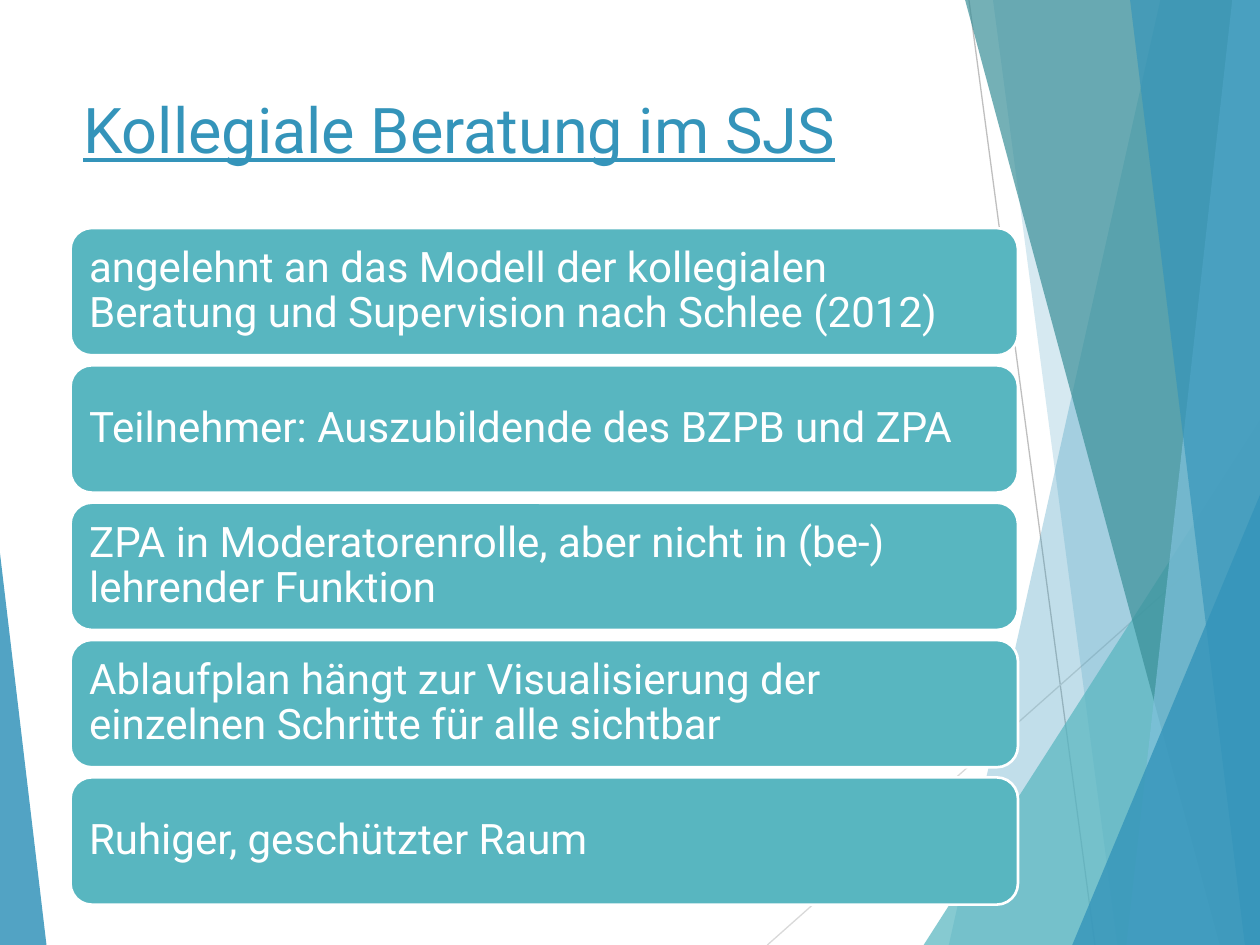
import pptx
import pptx.util
import pptx.dml.color
import pptx.enum.shapes
import pptx.enum.text
import pptx.oxml.ns
from lxml import etree

Pt = pptx.util.Pt
RGB = pptx.dml.color.RGBColor
Shape = pptx.enum.shapes.MSO_SHAPE
Anchor = pptx.enum.text.MSO_ANCHOR
Align = pptx.enum.text.PP_ALIGN
qn = pptx.oxml.ns.qn

WIDE, HIGH = 720, 540
FONT = "Roboto"
WHITE = RGB(0xFF, 0xFF, 0xFF)
BLUE = RGB(0x34, 0x94, 0xBA)
SKY = RGB(0x7F, 0xC1, 0xDB)
TEAL = RGB(0x58, 0xB6, 0xC0)
DEEP = RGB(0x3A, 0x8F, 0x98)
GREY = RGB(0xBF, 0xBF, 0xBF)
PALE = RGB(0xD9, 0xD9, 0xD9)

TITLE = "Kollegiale Beratung im SJS"
POINTS = [
    "angelehnt an das Modell der kollegialen Beratung und Supervision nach Schlee (2012)",
    "Teilnehmer: Auszubildende des BZPB und ZPA",
    "ZPA in Moderatorenrolle, aber nicht in (be-) lehrender Funktion",
    "Ablaufplan hängt zur Visualisierung der einzelnen Schritte für alle sichtbar",
    "Ruhiger, geschützter Raum",
]

# start x, start y, end x, end y, colour
LINES = [
    (553.7, 0, 625.7, HIGH, GREY),
    (WIDE, 290.2, 438.5, HIGH, PALE),
]
# Bands run to the right edge: ("band", top x, bottom x, colour, opacity)
# Wedges stand on the bottom edge: ("wedge", left, top, width, tip, colour, opacity)
DECOR = [
    ("band", 663.1, 542.2, BLUE, 30),
    ("band", 567.4, 638.6, BLUE, 20),
    ("wedge", 527.8, 240, 192.2, 1, TEAL, 72),
    ("band", 551.5, 697, DEEP, 70),
    ("band", 704.2, 643.7, SKY, 70),
    ("band", 645.8, 711.4, BLUE, 65),
    ("wedge", 612.7, 282.8, 107.3, 1, BLUE, 80),
    ("wedge", 0, 316, 26.6, 0, BLUE, 85),
]

LEFT, TOP = 40.3, 130.3
CARD_W, CARD_H, STEP = 541.4, 72.7, 78.48


def paint(shape, color, alpha=100):
    shape.shadow.inherit = False
    shape.fill.solid()
    shape.fill.fore_color.rgb = color
    shape.line.fill.background()
    if alpha < 100:
        clr = shape.element.spPr.find(qn("a:solidFill")).find(qn("a:srgbClr"))
        etree.SubElement(clr, qn("a:alpha")).set("val", str(alpha * 1000))


def style(para, size, color):
    para.alignment = Align.LEFT
    font = para.runs[0].font
    font.name, font.size, font.color.rgb = FONT, Pt(size), color
    return font


def add_line(shapes, x1, y1, x2, y2, color):
    line = shapes.add_connector(
        pptx.enum.shapes.MSO_CONNECTOR.STRAIGHT, Pt(x1), Pt(y1), Pt(x2), Pt(y2))
    line.line.color.rgb = color
    line.line.width = Pt(0.75)
    etree.SubElement(line.element.spPr, qn("a:effectLst"))


def add_band(shapes, high_x, low_x, color, alpha):
    path = shapes.build_freeform(Pt(high_x), 0)
    path.add_line_segments(
        [(Pt(WIDE), 0), (Pt(WIDE), Pt(HIGH)), (Pt(low_x), Pt(HIGH))], close=True)
    paint(path.convert_to_shape(), color, alpha)


def add_wedge(shapes, left, top, width, tip, color, alpha):
    wedge = shapes.add_shape(
        Shape.ISOSCELES_TRIANGLE, Pt(left), Pt(top), Pt(width), Pt(HIGH - top))
    wedge.adjustments[0] = tip
    paint(wedge, color, alpha)


def add_card(shapes, row, text):
    card = shapes.add_shape(
        Shape.ROUNDED_RECTANGLE, Pt(LEFT), Pt(TOP + row * STEP), Pt(CARD_W), Pt(CARD_H))
    paint(card, TEAL)
    card.line.color.rgb = WHITE
    card.line.width = Pt(1.5)
    frame = card.text_frame
    frame.word_wrap = True
    frame.vertical_anchor = Anchor.MIDDLE
    frame.margin_left = frame.margin_right = Pt(7.2)
    frame.text = text
    para = frame.paragraphs[0]
    para.line_spacing = 0.9
    style(para, 24, WHITE)


def set_title(title):
    title.left, title.top, title.width, title.height = map(Pt, (LEFT, 48.2, 507.6, 103.7))
    frame = title.text_frame
    frame.text = TITLE
    frame.vertical_anchor = Anchor.TOP
    frame.auto_size = pptx.enum.text.MSO_AUTO_SIZE.NONE
    style(frame.paragraphs[0], 36, BLUE).underline = True


def main():
    deck = pptx.Presentation()
    deck.slide_width, deck.slide_height = Pt(WIDE), Pt(HIGH)
    slide = deck.slides.add_slide(deck.slide_layouts[5])
    shapes = slide.shapes
    for line in LINES:
        add_line(shapes, *line)
    draw = {"band": add_band, "wedge": add_wedge}
    for kind, *rest in DECOR:
        draw[kind](shapes, *rest)
    set_title(shapes.title)
    for row, text in enumerate(POINTS):
        add_card(shapes, row, text)
    deck.save("out.pptx")


if __name__ == "__main__":
    main()
